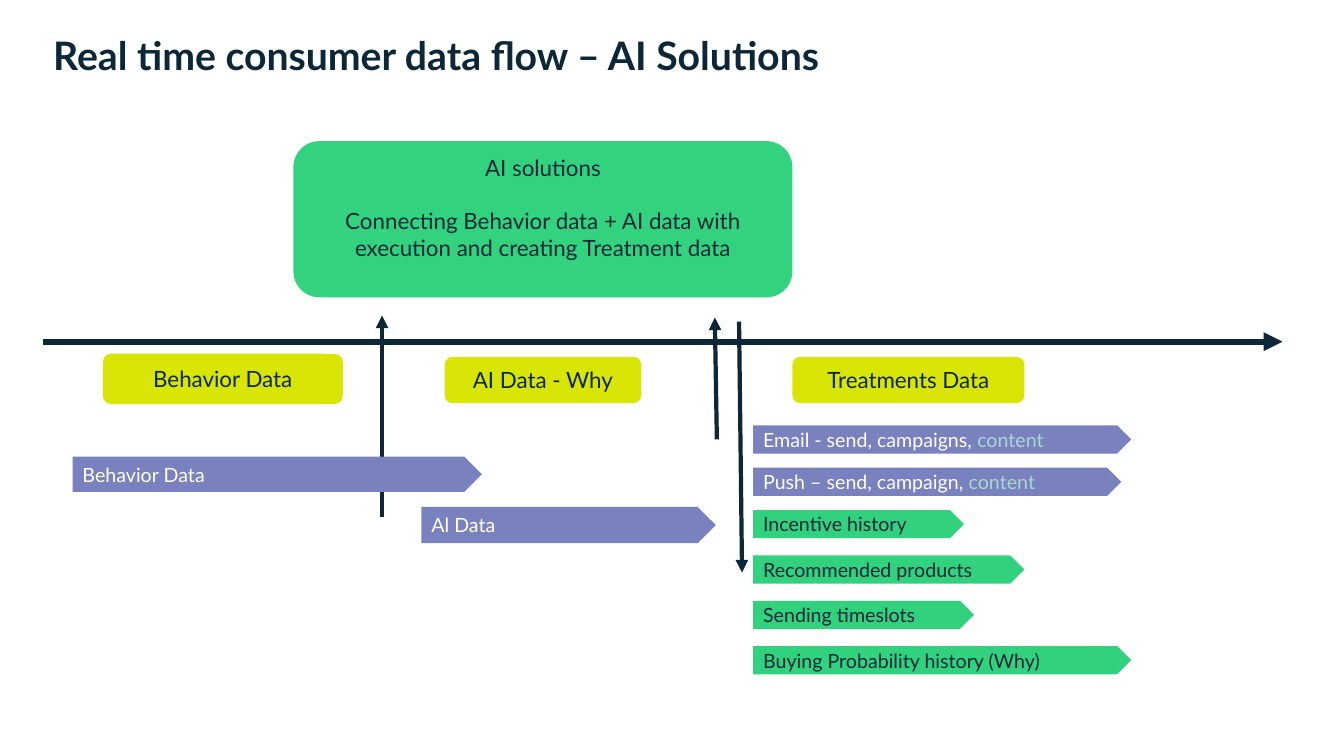
from typing import NamedTuple

from pptx import Presentation
from pptx.dml.color import RGBColor
from pptx.enum.shapes import MSO_CONNECTOR as CONN, MSO_SHAPE as SHAPE
from pptx.enum.text import MSO_ANCHOR as ANCHOR, PP_ALIGN as ALIGN
from pptx.oxml.ns import qn
from pptx.util import Inches, Pt
from lxml.etree import SubElement

FONT = "Lato"
NAVY, WHITE, MINT = "0C2838", "FFFFFF", "ABD7D1"
LIME, PURPLE, GREEN = "D9E504", "7981BE", "32D17E"


class Box(NamedTuple):
    x: float
    y: float
    w: float
    h: float


class Arrow(NamedTuple):
    x1: float
    y1: float
    x2: float
    y2: float
    width: float = 3


class Label(NamedTuple):
    text: str
    box: Box


class Bar(NamedTuple):
    text: str
    box: Box
    fill: str
    color: str
    accent: str = ""


class Treatment(NamedTuple):
    text: str
    width: float
    accent: str = ""


TIMELINE = Arrow(0.43, 3.39, 12.72, 3.39, 4.5)
FLOWS = [
    Arrow(3.79, 5.13, 3.79, 3.13),
    Arrow(7.11, 4.36, 7.09, 3.15),
    Arrow(7.33, 3.19, 7.36, 5.68),
]
LABELS = [
    Label("Behavior Data", Box(1.02, 3.51, 2.38, 0.5)),
    Label("AI Data - Why", Box(4.41, 3.54, 1.95, 0.46)),
    Label("Treatments Data", Box(7.86, 3.54, 2.3, 0.46)),
]
SOURCES = [
    Bar("Behavior Data", Box(0.72, 4.53, 4.06, 0.35), PURPLE, WHITE),
    Bar("Al Data", Box(4.18, 5.03, 2.92, 0.36), PURPLE, WHITE),
]
MESSAGES = [
    Treatment("Email - send, campaigns, ", 3.75, "content"),
    Treatment("Push – send, campaign, ", 3.65, "content"),
]
HISTORIES = [
    Treatment("Incentive history", 2.09),
    Treatment("Recommended products", 2.69),
    Treatment("Sending timeslots", 2.19),
    Treatment("Buying Probability history (Why)", 3.75),
]


def rgb(color: str) -> RGBColor:
    return RGBColor.from_string(color)


def add_run(p, text: str, *, size: float, color: str = NAVY, bold: bool = False) -> None:
    r = p.add_run()
    r.text = text
    r.font.name = FONT
    r.font.size = Pt(size)
    r.font.bold = bold
    r.font.color.rgb = rgb(color)


def add_block(s, shape: SHAPE, box: Box, fill: str, anchor: ANCHOR = ANCHOR.MIDDLE):
    sp = s.shapes.add_shape(shape, *map(Inches, box))
    sp.shadow.inherit = False
    sp.fill.solid()
    sp.fill.fore_color.rgb = rgb(fill)
    sp.line.fill.background()
    tf = sp.text_frame
    tf.word_wrap = True
    tf.vertical_anchor = anchor
    return tf


def add_arrow(s, arrow: Arrow) -> None:
    ends = map(Inches, (arrow.x1, arrow.y1, arrow.x2, arrow.y2))
    cx = s.shapes.add_connector(CONN.STRAIGHT, *ends)
    cx.line.color.rgb = rgb(NAVY)
    cx.line.width = Pt(arrow.width)
    SubElement(cx.line._get_or_add_ln(), qn("a:tailEnd"), type="triangle")
    SubElement(cx._element.spPr, qn("a:effectLst"))


def add_title(s, text: str) -> None:
    tf = s.shapes.add_textbox(*map(Inches, Box(0.43, 0.26, 12.53, 0.57))).text_frame
    tf.word_wrap = True
    add_run(tf.paragraphs[0], text, size=28, bold=True)


def add_label(s, label: Label) -> None:
    p = add_block(s, SHAPE.ROUNDED_RECTANGLE, label.box, LIME).paragraphs[0]
    p.alignment = ALIGN.CENTER
    add_run(p, label.text, size=16)


def add_bar(s, bar: Bar) -> None:
    p = add_block(s, SHAPE.PENTAGON, bar.box, bar.fill).paragraphs[0]
    p.alignment = ALIGN.LEFT
    add_run(p, bar.text, size=14, color=bar.color)
    if bar.accent:
        add_run(p, bar.accent, size=14, color=MINT)


def add_treatments(s, items: list[Treatment], top: float, pitch: float,
                   fill: str, color: str) -> None:
    for i, item in enumerate(items):
        box = Box(7.47, top + i * pitch, item.width, 0.28)
        add_bar(s, Bar(item.text, box, fill, color, item.accent))


def add_solutions(s) -> None:
    tf = add_block(s, SHAPE.ROUNDED_RECTANGLE, Box(2.91, 1.4, 4.95, 1.55), "32D27E", ANCHOR.TOP)
    heading, detail = tf.paragraphs[0], tf.add_paragraph()
    heading.alignment = detail.alignment = ALIGN.CENTER
    detail.space_before = Pt(19.2)
    add_run(heading, "AI solutions", size=16)
    add_run(detail, "Connecting Behavior data + AI data with execution "
            "and creating Treatment data", size=16)


def main() -> None:
    prs = Presentation()
    prs.slide_width, prs.slide_height = Inches(13.33), Inches(7.5)
    s = prs.slides.add_slide(prs.slide_layouts[6])
    add_title(s, "Real time consumer data flow – AI Solutions")
    add_arrow(s, TIMELINE)
    for label in LABELS:
        add_label(s, label)
    add_solutions(s)
    for flow in FLOWS:
        add_arrow(s, flow)
    add_treatments(s, MESSAGES, 4.22, 0.42, PURPLE, WHITE)
    add_treatments(s, HISTORIES, 5.06, 0.45, GREEN, NAVY)
    for bar in SOURCES:
        add_bar(s, bar)
    prs.save("out.pptx")


if __name__ == "__main__":
    main()
